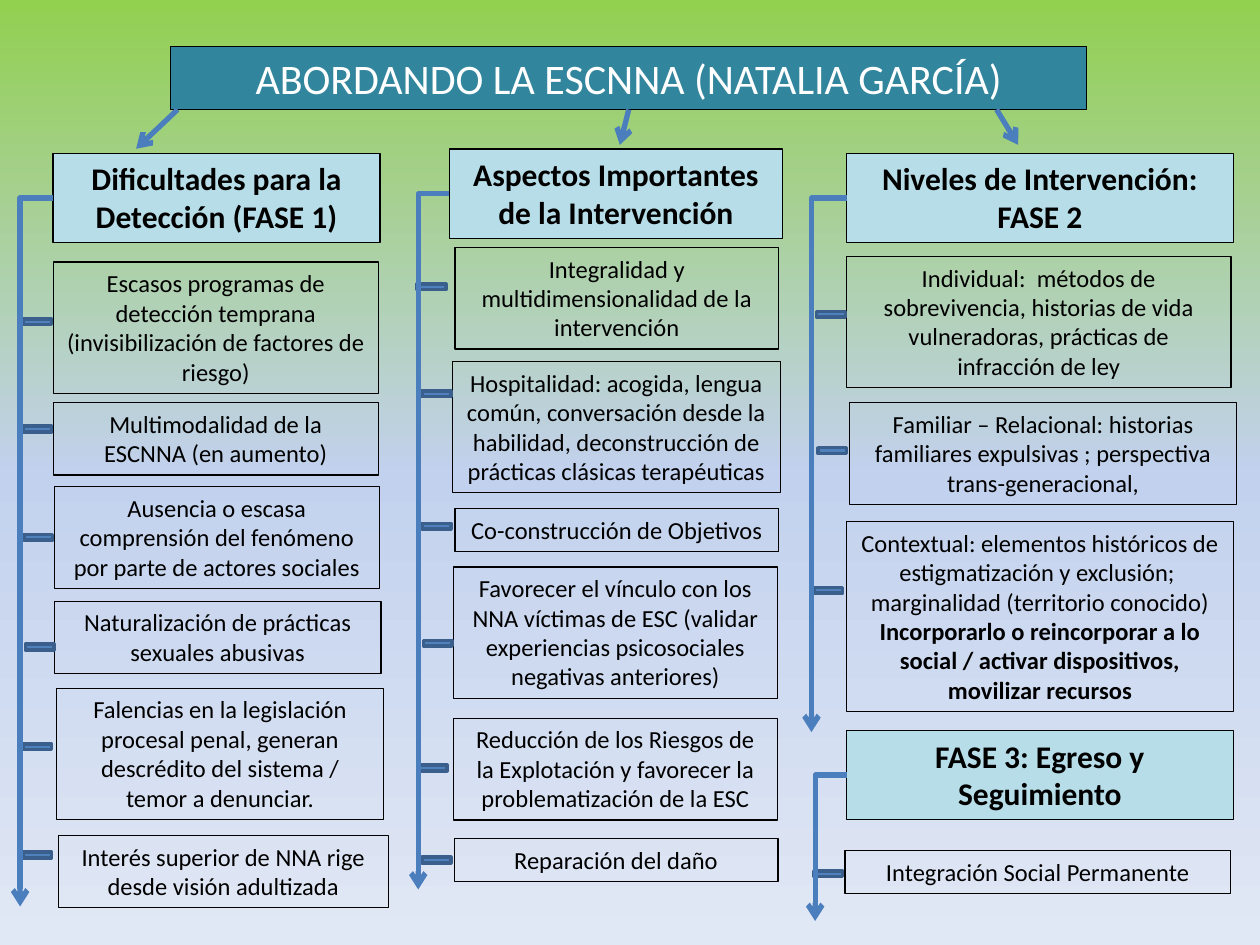
from copy import deepcopy

from lxml import etree
from pptx import Presentation
from pptx.dml.color import RGBColor
from pptx.enum.shapes import MSO_CONNECTOR, MSO_SHAPE
from pptx.enum.text import MSO_AUTO_SIZE, PP_ALIGN
from pptx.oxml.ns import qn
from pptx.util import Pt

STRAIGHT, ELBOW = MSO_CONNECTOR.STRAIGHT, MSO_CONNECTOR.ELBOW
MINUS = MSO_SHAPE.MATH_MINUS
FIT_TEXT = MSO_AUTO_SIZE.SHAPE_TO_FIT_TEXT
CENTER = PP_ALIGN.CENTER

FONT = "Calibri"
BLACK, WHITE = "000000", "FFFFFF"
TEAL, PALE_BLUE = "31859C", "B7DEE8"
ARROW_BLUE, TICK_BLUE, TICK_EDGE = "4B7EBC", "4F81BD", "3A5F8C"
BACKGROUND = [(0, "92D050"), (0.5, "C2D1ED"), (1, "E1E8F5")]

HEADING_HEIGHT = 51
ITEM_PADDING, ITEM_LINE = 7.6, 16.85
TICK_SIZE = (22.3, 13.7)

TITLE = "ABORDANDO LA ESCNNA (NATALIA GARCÍA)"
TITLE_ARROWS = [
    (359.3, 62.6, 354.2, 82.8),
    (101.5, 62.6, 77.8, 85),
    (569.5, 62.6, 581.8, 82.8),
]

# Heading: (text, left, top, width); trunk: (x, bottom)
# Item: (left, top, width, lines, tick left, tick top, paragraphs)
BRANCHES = [
    (("Dificultades para la Detección (FASE 1)", 30.4, 87.6, 186.8), (11.5, 518), [
        (30.4, 149.8, 185.8, 4, 10.1, 177.1,
         ["Escasos programas de detección temprana (invisibilización de factores de riesgo)"]),
        (30.4, 230.2, 185.8, 2, 10.1, 238.3,
         ["Multimodalidad de la ESCNNA (en aumento)"]),
        (31, 278, 185.8, 3, 10.8, 300.2,
         ["Ausencia o escasa comprensión del fenómeno por parte de actores sociales"]),
        (31, 343.6, 186.8, 2, 11.5, 362.9,
         ["Naturalización de prácticas sexuales abusivas"]),
        (32.4, 393.3, 186.8, 4, 10.1, 419.8,
         ["Falencias en la legislación procesal penal, generan descrédito del sistema / "
          "temor a denunciar."]),
        (33.3, 477.4, 188.6, 2, 10.1, 481.7,
         ["Interés superior de NNA rige desde visión adultizada"]),
    ]),
    (("Aspectos Importantes de la Intervención", 256.8, 85.2, 190.4), (239, 508.3), [
        (260, 141.4, 185, 3, 235.4, 157,
         ["Integralidad y multidimensionalidad de la intervención"]),
        (258.5, 206.6, 187.4, 4, 238.3, 218.2,
         ["Hospitalidad: acogida, lengua común, conversación desde la habilidad, "
          "deconstrucción de prácticas clásicas terapéuticas"]),
        (260, 290.6, 185, 1, 238.3, 293.8,
         ["Co-construcción de Objetivos"]),
        (259.2, 324, 185, 4, 239, 360.7,
         ["Favorecer el vínculo con los NNA víctimas de ESC (validar experiencias "
          "psicosociales negativas anteriores)"]),
        (259.2, 410.4, 185, 3, 236.2, 432,
         ["Reducción de los Riesgos de la Explotación y favorecer la problematización "
          "de la ESC"]),
        (259.6, 479.2, 185, 1, 238.3, 484.6,
         ["Reparación del daño"]),
    ]),
    (("Niveles de Intervención: FASE 2", 483.8, 87.6, 221), (463.7, 418.3), [
        (483.8, 146.5, 219.6, 4, 463.7, 172.8,
         ["Individual:  métodos de sobrevivencia, historias de vida vulneradoras, "
          "prácticas de infracción de ley"]),
        (485.6, 230.2, 221, 3, 464.4, 250.6,
         ["Familiar – Relacional: historias familiares expulsivas ; perspectiva "
          "trans-generacional,"]),
        (483.8, 298, 221, 6, 462.2, 330.5,
         ["Contextual: elementos históricos de estigmatización y exclusión;  "
          "marginalidad (territorio conocido)",
          "Incorporarlo o reincorporar a lo social / activar dispositivos, "
          "movilizar recursos"]),
    ]),
    (("FASE 3: Egreso y Seguimiento", 483.8, 417.4, 221), (465.8, 526.3), [
        (482.8, 486, 220.4, 1, 462.2, 492.5,
         ["Integración Social Permanente"]),
    ]),
]


def rgb(value):
    return RGBColor.from_string(value)


def paint_background(slide):
    fill = slide.background.fill
    fill.gradient()
    fill.gradient_angle = 270
    stop_list = next(slide.element.iter(qn("a:gsLst")))
    stop_list.append(deepcopy(stop_list[-1]))
    for stop, (position, color) in zip(fill.gradient_stops, BACKGROUND):
        stop.position = position
        stop.color.rgb = rgb(color)


def add_box(slide, left, top, width, height, paragraphs, size,
            fill=None, color=BLACK, bold=False):
    box = slide.shapes.add_textbox(Pt(left), Pt(top), Pt(width), Pt(height))
    if fill:
        box.fill.solid()
        box.fill.fore_color.rgb = rgb(fill)
    box.line.color.rgb = rgb(BLACK)
    box.line.width = Pt(0.75)
    frame = box.text_frame
    frame.word_wrap = True
    frame.auto_size = FIT_TEXT
    frame.text = "\n".join(paragraphs)
    for index, paragraph in enumerate(frame.paragraphs):
        paragraph.alignment = CENTER
        for run in paragraph.runs:
            run.font.name = FONT
            run.font.size = Pt(size)
            run.font.bold = bold or index > 0  # follow-up paragraphs stand out
            run.font.color.rgb = rgb(color)


def add_arrow(slide, kind, x1, y1, x2, y2):
    arrow = slide.shapes.add_connector(kind, Pt(x1), Pt(y1), Pt(x2), Pt(y2))
    arrow.line.color.rgb = rgb(ARROW_BLUE)
    arrow.line.width = Pt(3)
    etree.SubElement(arrow.line._get_or_add_ln(), qn("a:tailEnd"), type="arrow")
    properties = arrow._element.spPr
    etree.SubElement(properties, qn("a:effectLst"))
    return properties


def add_trunk(slide, x1, y1, x2, y2):
    # Single-bend elbow: left from the heading, then down
    properties = add_arrow(slide, ELBOW, x1, y1, x2, y2)
    properties.find(qn("a:prstGeom")).set("prst", "bentConnector2")
    transform = properties.find(qn("a:xfrm"))
    transform.attrib.pop("flipH", None)
    transform.set("rot", "10800000")
    transform.set("flipV", "1")


def add_tick(slide, left, top):
    tick = slide.shapes.add_shape(MINUS, Pt(left), Pt(top), *map(Pt, TICK_SIZE))
    tick.shadow.inherit = False
    tick.fill.solid()
    tick.fill.fore_color.rgb = rgb(TICK_BLUE)
    tick.line.color.rgb = rgb(TICK_EDGE)
    tick.line.width = Pt(2)


def add_branch(slide, heading, trunk, items):
    text, left, top, width = heading
    add_box(slide, left, top, width, HEADING_HEIGHT, [text], 18,
            fill=PALE_BLUE, bold=True)
    for item_left, item_top, item_width, lines, _, _, paragraphs in items:
        add_box(slide, item_left, item_top, item_width,
                ITEM_PADDING + ITEM_LINE * lines, paragraphs, 14)
    for item in items:
        add_tick(slide, *item[4:6])
    add_trunk(slide, left, top + HEADING_HEIGHT / 2, *trunk)


def main():
    deck = Presentation()
    deck.slide_width, deck.slide_height = Pt(720), Pt(540)
    slide = deck.slides.add_slide(deck.slide_layouts[6])
    paint_background(slide)

    # Title and its arrows to the three columns
    add_box(slide, 97.6, 26.6, 523.4, 36, [TITLE], 24, fill=TEAL, color=WHITE)
    for ends in TITLE_ARROWS:
        add_arrow(slide, STRAIGHT, *ends)

    # Phases with their points
    for branch in BRANCHES:
        add_branch(slide, *branch)

    deck.save("out.pptx")


if __name__ == "__main__":
    main()
